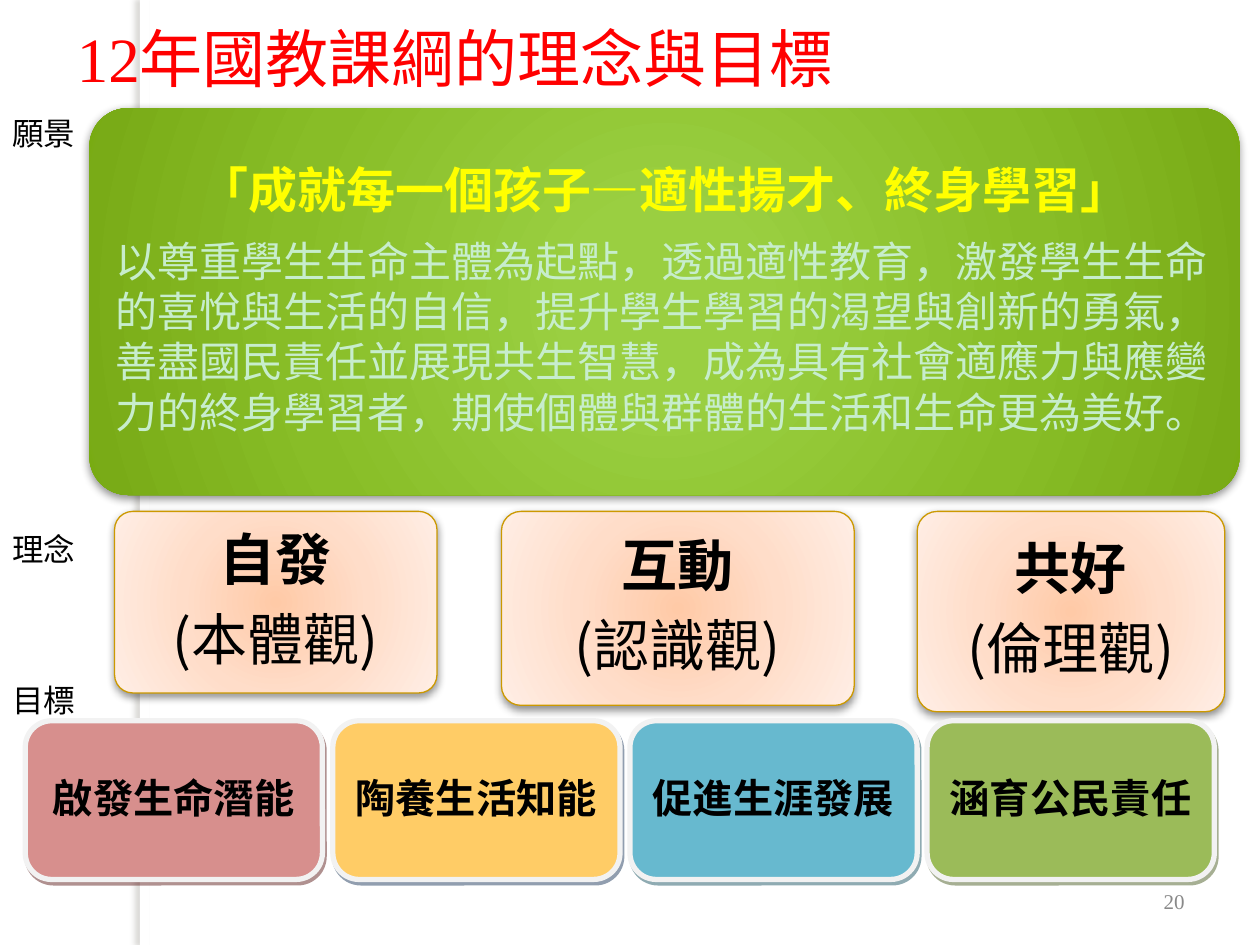
from dataclasses import dataclass

from lxml import etree
from pptx import Presentation
from pptx.dml.color import RGBColor
from pptx.enum.shapes import MSO_SHAPE
from pptx.enum.text import MSO_ANCHOR, PP_ALIGN
from pptx.oxml import parse_xml
from pptx.oxml.ns import nsdecls, qn
from pptx.util import Cm, Pt

RECT, ROUNDED = MSO_SHAPE.RECTANGLE, MSO_SHAPE.ROUNDED_RECTANGLE
LEFT, CENTER, RIGHT = PP_ALIGN.LEFT, PP_ALIGN.CENTER, PP_ALIGN.RIGHT
MIDDLE = MSO_ANCHOR.MIDDLE


@dataclass(frozen=True)
class Theme:
    serif: str = "Times New Roman"
    sans: str = "Noto Sans CJK SC"
    paper: str = "FFFFFF"
    ink: str = "000000"
    title: str = "FF0000"
    motto: str = "FFFF00"
    pale: str = "C7EDCC"
    page: str = "898989"
    idea_line: str = "CC9900"
    goal_line: str = "F2F2F2"
    bar_shadow: str = "736F63"
    vision_stops: tuple = ((0, "9AD041"), (15, "9ACF41"), (62, "88BD27"),
                           (97, "79AB17"), (100, "77AC08"))
    idea_stops: tuple = ((0, "FFCAA7"), (50, "FFDDC9"), (100, "FFEEE5"))
    title_size: int = 36
    idea_size: int = 32
    motto_size: int = 28
    body_size: int = 24
    goal_size: int = 23
    label_size: int = 18
    page_size: int = 12


THEME = Theme()

prs = Presentation()
prs.slide_width, prs.slide_height = Cm(25.4), Cm(19.05)
slide = prs.slides.add_slide(prs.slide_layouts[6])


def add_panel(kind, box, fill, shadow, line=None):
    """Add a filled shape; fill is a colour or radial stops, shadow is (colour, alpha, blur, distance, angle)."""
    panel = slide.shapes.add_shape(kind, *[Cm(v) for v in box])
    panel.shadow.inherit = False
    if isinstance(fill, str):
        panel.fill.solid()
        panel.fill.fore_color.rgb = RGBColor.from_string(fill)
    else:
        stops = "".join(f'<a:gs pos="{pos * 1000}"><a:srgbClr val="{color}"/></a:gs>'
                        for pos, color in fill)
        panel._element.spPr.find(qn("a:prstGeom")).addnext(parse_xml(
            f'<a:gradFill {nsdecls("a")} rotWithShape="1"><a:gsLst>{stops}</a:gsLst>'
            '<a:path path="circle"><a:fillToRect l="50000" t="50000" r="50000" b="50000"/>'
            '</a:path></a:gradFill>'))
    if line:
        panel.line.color.rgb = RGBColor.from_string(line[0])
        panel.line.width = Pt(line[1])
    else:
        panel.line.fill.background()
    color, alpha, blur, distance, angle = shadow
    effects = panel._element.spPr.find(qn("a:effectLst"))
    effects.append(parse_xml(
        f'<a:outerShdw {nsdecls("a")} blurRad="{Pt(blur)}" dist="{Pt(distance)}" '
        f'dir="{angle * 60000}" algn="ctr" rotWithShape="0"><a:srgbClr val="{color}">'
        f'<a:alpha val="{alpha * 1000}"/></a:srgbClr></a:outerShdw>'))
    return panel


def write(shape, lines, align=CENTER, inset=0.25, spacing=1.0, after=0):
    """Fill a shape with lines of (text, size, colour, bold, font)."""
    frame = shape.text_frame
    frame.word_wrap = True
    frame.vertical_anchor = MIDDLE
    frame.margin_left = frame.margin_right = Cm(inset)
    frame.margin_top = frame.margin_bottom = Cm(inset / 2 if inset == 0.25 else inset)
    frame.text = "\n".join(line[0] for line in lines)
    for paragraph, (_, size, color, bold, font) in zip(frame.paragraphs, lines):
        paragraph.alignment = align
        paragraph.line_spacing = spacing
        paragraph.space_after = Pt(after)
        run = paragraph.runs[0]
        run.font.size, run.font.bold, run.font.name = Pt(size), bold, font
        run.font.color.rgb = RGBColor.from_string(color)
        east_asian = etree.SubElement(run._r.rPr, qn("a:ea"))
        east_asian.set("typeface", THEME.sans)


# Side bar
add_panel(RECT, (2.82, 0, 0.2, 19.05), THEME.paper, (THEME.bar_shadow, 25, 3, 3, 180))

# Vision
SOFT_SHADOW = (THEME.ink, 43, 5, 2, 90)
vision = add_panel(ROUNDED, (1.8, 2.18, 23.19, 7.8), THEME.vision_stops, SOFT_SHADOW)
vision.adjustments[0] = 0.1
write(vision, [
    ("「成就每一個孩子—適性揚才、終身學習」", THEME.motto_size, THEME.motto, True, THEME.sans),
    ("以尊重學生生命主體為起點，透過適性教育，激發學生生命的喜悅與生活的自信，"
     "提升學生學習的渴望與創新的勇氣，善盡國民責任並展現共生智慧，"
     "成為具有社會適應力與應變力的終身學習者，期使個體與群體的生活和生命更為美好。",
     THEME.body_size, THEME.pale, False, THEME.sans),
], inset=0.3, after=9)
motto, statement = vision.text_frame.paragraphs
motto.line_spacing = 0.9
statement.alignment = LEFT

# Ideas
for left, width, height, idea, view in (
    (2.31, 6.5, 3.66, "自發", "(本體觀)"),
    (10.11, 7.11, 3.91, "互動", "(認識觀)"),
    (18.49, 6.2, 4.04, "共好", "(倫理觀)"),
):
    card = add_panel(ROUNDED, (left, 10.31, width, height), THEME.idea_stops, SOFT_SHADOW,
                     (THEME.idea_line, 0.75))
    card.adjustments[0] = 0.1
    write(card, [(idea, THEME.idea_size, THEME.ink, True, THEME.sans),
                 (view, THEME.idea_size, THEME.ink, False, THEME.sans)],
          inset=0.33, spacing=0.9, after=11)

# Goals
for left, width, goal, fill, shade in (
    (0.51, 5.99, "啟發生命潛能", "D78F8D", "622423"),
    (6.71, 5.79, "陶養生活知能", "FFCC66", "243F60"),
    (12.7, 5.79, "促進生涯發展", "67B9CF", "205867"),
    (18.69, 5.79, "涵育公民責任", "9BBB59", "4E6128"),
):
    tile = add_panel(ROUNDED, (left, 14.53, width, 3.2), fill, (shade, 50, 0, 2.2, 63),
                     (THEME.goal_line, 3))
    write(tile, [(goal, THEME.goal_size, THEME.ink, True, THEME.serif)], spacing=0.96)

# Title, row labels and page number
for box, text, size, color, align in (
    ((1.3, 0.33, 22.86, 1.65), "12年國教課綱的理念與目標", THEME.title_size, THEME.title, LEFT),
    ((0, 2.18, 1.9, 1), "願景", THEME.label_size, THEME.ink, LEFT),
    ((0, 10.57, 1.9, 1), "理念", THEME.label_size, THEME.ink, LEFT),
    ((0, 13.61, 1.9, 1), "目標", THEME.label_size, THEME.ink, LEFT),
    ((18.21, 17.65, 5.92, 1.02), "20", THEME.page_size, THEME.page, RIGHT),
):
    caption = slide.shapes.add_textbox(*[Cm(v) for v in box])
    write(caption, [(text, size, color, False, THEME.serif)], align)

prs.save("out.pptx")
